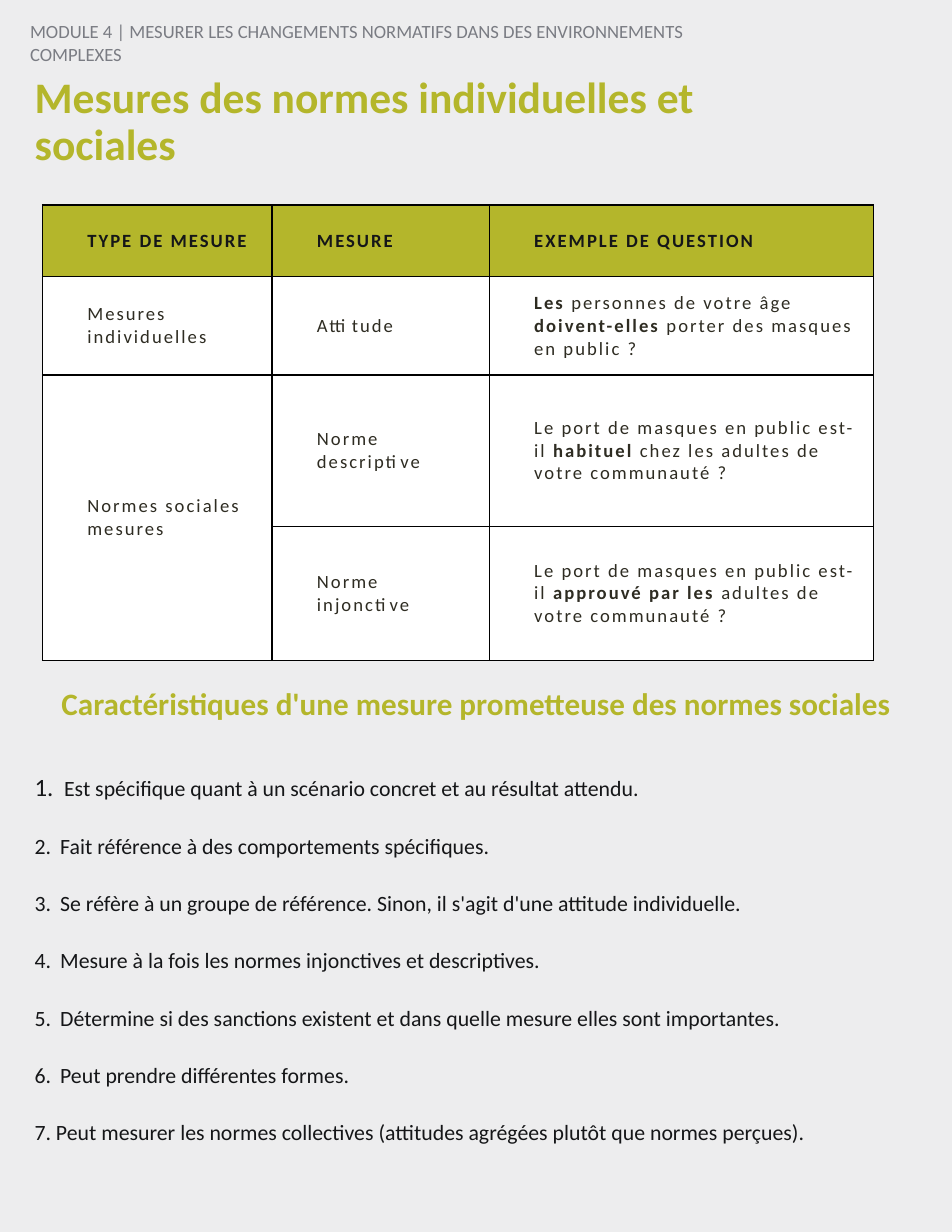
from lxml.etree import SubElement
from pptx import Presentation
from pptx.dml.color import RGBColor
from pptx.enum.text import MSO_ANCHOR, MSO_AUTO_SIZE, PP_ALIGN
from pptx.oxml.ns import qn
from pptx.util import Pt

COLORS = {"page": "EDEDEE", "green": "B4B62B", "grey": "7A7C83", "ink": "151618",
          "body": "2E2C22", "white": "FFFFFF", "border": "000000"}


def add_span(para, text, size, color, bold=False):
    span = para.add_run()
    span.text = text
    for name, value in {"name": "Calibri", "size": Pt(size), "bold": bold}.items():
        setattr(span.font, name, value)
    span.font.color.rgb = RGBColor.from_string(COLORS[color])
    return span


def place(box, left, top, width, height):
    for name, value in {"left": left, "top": top, "width": width, "height": height}.items():
        setattr(box, name, Pt(value))
    frame = box.text_frame
    for name, value in {"word_wrap": True, "auto_size": MSO_AUTO_SIZE.NONE,
                        "vertical_anchor": MSO_ANCHOR.TOP}.items():
        setattr(frame, name, value)
    frame.paragraphs[0].alignment = PP_ALIGN.LEFT
    return frame


deck = Presentation()
deck.slide_width, deck.slide_height = Pt(612), Pt(792)
page = deck.slides.add_slide(deck.slide_layouts[5])
page.background.fill.solid()
page.background.fill.fore_color.rgb = RGBColor.from_string(COLORS["page"])

title = place(page.shapes.title, 15.12, 45.36, 534.24, 41.76)
title.paragraphs[0].line_spacing = 0.9
add_span(title.paragraphs[0], "Mesures des normes individuelles et sociales", 28, "green", True)

labels = [
    ("MODULE 4 | MESURER LES CHANGEMENTS NORMATIFS DANS DES ENVIRONNEMENTS COMPLEXES",
     12, "grey", False, (12.24, 9.36, 473.76, 33.84)),
    ("Caractéristiques d'une mesure prometteuse des normes sociales",
     20, "green", True, (32.4, 436.32, 581.76, 55.44)),
]
for text, size, color, bold, bounds in labels:
    frame = place(page.shapes.add_textbox(0, 0, 0, 0), *bounds)
    add_span(frame.paragraphs[0], text, size, color, bold)

rows = [
    ["**TYPE DE MESURE", "**MESURE", "**EXEMPLE DE QUESTION"],
    ["Mesures individuelles", "Attitude",
     "**Les **personnes de votre âge **doivent-elles **porter des masques en public ?"],
    ["Normes sociales \nmesures", "Norme descriptive",
     "Le port de masques en public est-il **habituel **chez les adultes de votre communauté ?"],
    ["", "Norme injonctive",
     "Le port de masques en public est-il **approuvé par les **adultes de votre communauté ?"],
]
column_widths = [147.6, 139.68, 246.96]
row_heights = [46.08, 63.36, 97.2, 86.4]
table = page.shapes.add_table(len(rows), len(column_widths), Pt(27.36), Pt(131.76),
                              Pt(sum(column_widths)), Pt(sum(row_heights))).table
for column, width in zip(table.columns, column_widths):
    column.width = Pt(width)
for row, height in zip(table.rows, row_heights):
    row.height = Pt(height)
table.cell(2, 0).merge(table.cell(3, 0))

for row_index, texts in enumerate(rows):
    header = row_index == 0
    for column_index, text in enumerate(texts):
        cell = table.cell(row_index, column_index)
        for name, value in {"margin_left": Pt(28.8), "margin_right": Pt(7.2),
                            "margin_top": Pt(3.6), "margin_bottom": Pt(3.6),
                            "vertical_anchor": MSO_ANCHOR.MIDDLE}.items():
            setattr(cell, name, value)
        properties = cell._tc.get_or_add_tcPr()
        for side in ("lnL", "lnR", "lnT", "lnB"):
            line = SubElement(properties, qn(f"a:{side}"), w=str(Pt(1)))
            SubElement(SubElement(line, qn("a:solidFill")), qn("a:srgbClr"), val=COLORS["border"])
        cell.fill.solid()
        cell.fill.fore_color.rgb = RGBColor.from_string(COLORS["green" if header else "white"])
        para = cell.text_frame.paragraphs[0]
        for line_index, line_text in enumerate(text.split("\n")):
            if line_index:
                para.add_line_break()
            for part_index, part in enumerate(line_text.split("**")):
                if part:
                    span = add_span(para, part, 12, "ink" if header else "body", part_index % 2 == 1)
                    span.font._element.set("spc", "130")

criteria = [
    "Est spécifique quant à un scénario concret et au résultat attendu.",
    "Fait référence à des comportements spécifiques.",
    "Se réfère à un groupe de référence. Sinon, il s'agit d'une attitude individuelle.",
    "Mesure à la fois les normes injonctives et descriptives.",
    "Détermine si des sanctions existent et dans quelle mesure elles sont importantes.",
    "Peut prendre différentes formes.",
    "Peut mesurer les normes collectives (attitudes agrégées plutôt que normes perçues).",
]
frame = place(page.shapes.add_textbox(0, 0, 0, 0), 15.12, 492.48, 581.76, 249.84)
for number, text in enumerate(criteria, 1):
    first, last = number == 1, number == len(criteria)
    para = frame.paragraphs[0] if first else frame.add_paragraph()
    if not first:
        para.space_before = Pt(20)
    if not last:
        tabs = SubElement(para._p.get_or_add_pPr(), qn("a:tabLst"))
        SubElement(tabs, qn("a:tab"), pos=str(Pt(19 if first else 16.5)), algn="l")
    add_span(para, f"{number}." + (" " if last else "\t"), 16 if first else 14, "ink")
    add_span(para, text, 14, "ink")

deck.save("out.pptx")
